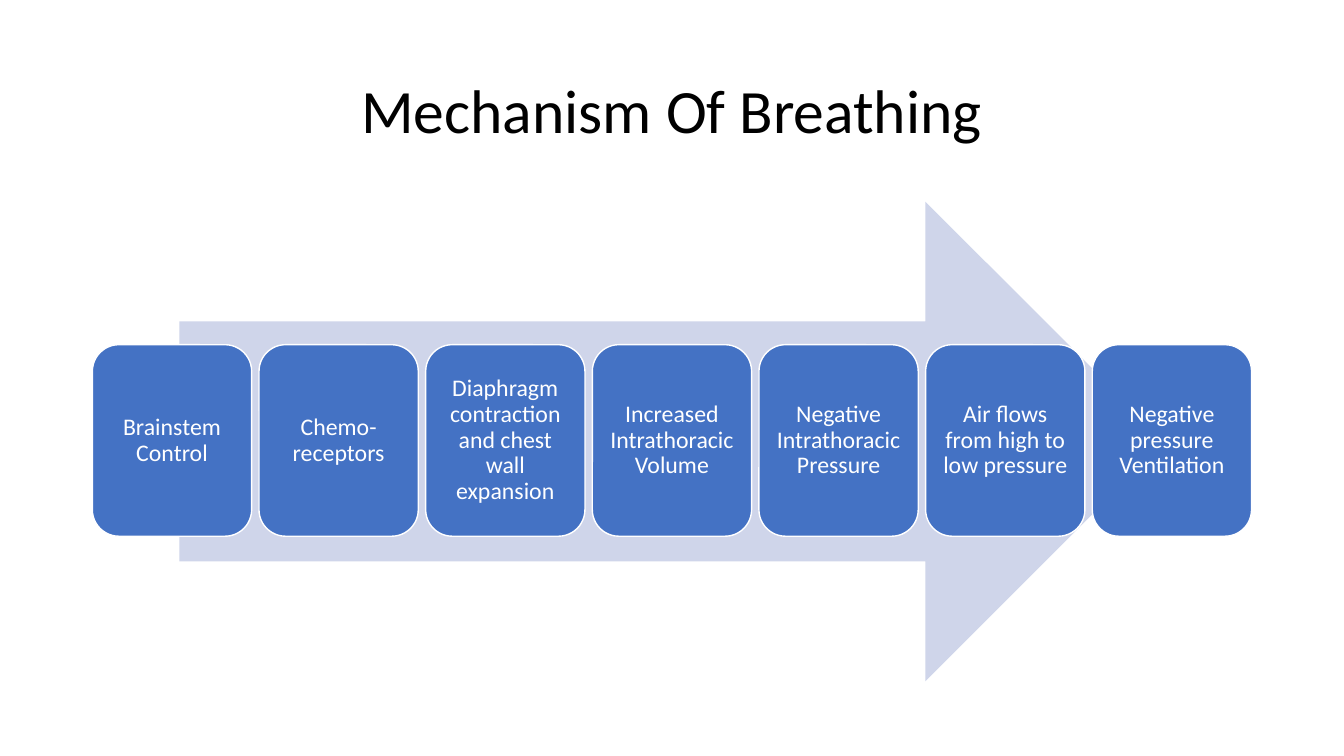
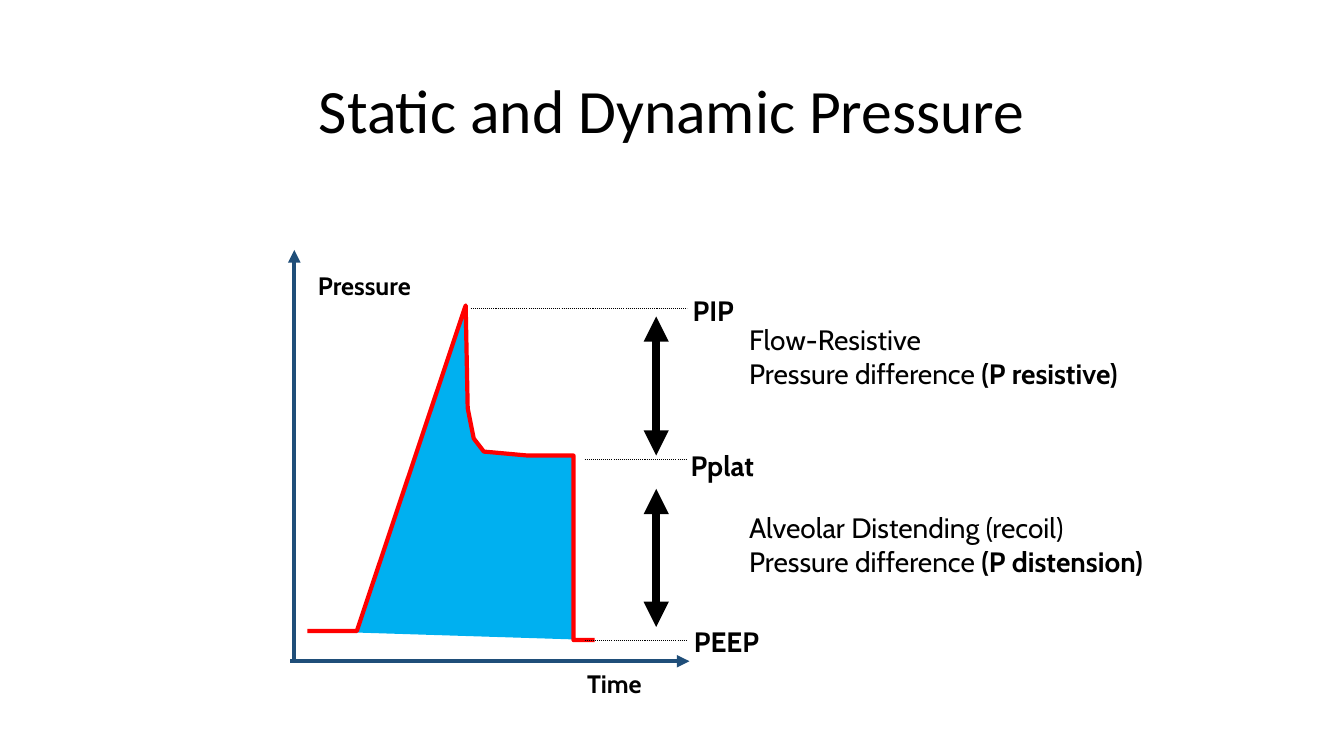
import pptx
import pptx.util
import pptx.dml.color
import pptx.enum.dml
import pptx.enum.shapes
import pptx.enum.text
import pptx.oxml.ns
import lxml.etree

HUES = {
    "ink": "000000", "white": "FFFFFF", "box": "4472C4", "band": "CFD5EA",
    "axis": "1F4E79", "area": "00B0F0", "curve": "FF0000",
}
FORMS = pptx.enum.shapes.MSO_SHAPE
ALIGN = pptx.enum.text.PP_ALIGN
MID = pptx.enum.text.MSO_ANCHOR.MIDDLE
TOP = pptx.enum.text.MSO_ANCHOR.TOP
DOTS = pptx.enum.dml.MSO_LINE.ROUND_DOT
COLS, ROWS = 80, 45
LEFT, SPAN = 5.5, 69


class Deck:
    """Hold the style and the current slide, on a grid of 80 columns by 45 rows."""

    def __init__(self):
        self.show = pptx.Presentation()
        self.show.slide_width = pptx.util.Inches(13.33)
        self.show.slide_height = pptx.util.Inches(7.5)
        self.page = None

    def grid(self, *spots):
        wide = self.show.slide_width / COLS
        high = self.show.slide_height / ROWS
        return [round(spot * (high if i % 2 else wide)) for i, spot in enumerate(spots)]

    def hue(self, name):
        return pptx.dml.color.RGBColor.from_string(HUES[name])

    def style(self, item, form):
        for key, value in form.items():
            setattr(item, key, value)

    def words(self, frame, paras, font, para, body, hue="ink"):
        self.style(frame, {"word_wrap": True, **body})
        for i, runs in enumerate(paras):
            line = frame.paragraphs[0] if i == 0 else frame.add_paragraph()
            self.style(line, para)
            for label, bold in runs:
                run = line.add_run()
                run.text = label
                self.style(run.font, {"bold": bold, **font})
                run.font.color.rgb = self.hue(hue)

    def start(self, label):
        self.page = self.show.slides.add_slide(self.show.slide_layouts[5])
        title = self.page.shapes.title
        place = zip(("left", "top", "width", "height"), self.grid(LEFT, 2.4, SPAN, 8.7))
        self.style(title, dict(place))
        self.words(
            title.text_frame, [[(label, False)]],
            {"name": "Calibri", "size": pptx.util.Pt(44)},
            {"alignment": ALIGN.CENTER, "line_spacing": 0.9},
            {"vertical_anchor": MID},
        )

    def paint(self, shape, fill, line=None, width=1):
        shape.shadow.inherit = False
        shape.fill.solid()
        shape.fill.fore_color.rgb = self.hue(fill)
        if line:
            shape.line.color.rgb = self.hue(line)
            shape.line.width = pptx.util.Pt(width)
        else:
            shape.line.fill.background()

    def shape(self, form, place, fill, line=None):
        shape = self.page.shapes.add_shape(form, *self.grid(*place))
        self.paint(shape, fill, line)
        return shape

    def card(self, place, label):
        card = self.shape(FORMS.ROUNDED_RECTANGLE, place, "box", "white")
        sides = ("margin_left", "margin_right", "margin_top", "margin_bottom")
        self.words(
            card.text_frame, [[(label, False)]],
            {"name": "Calibri", "size": pptx.util.Pt(17)},
            {"alignment": ALIGN.CENTER, "line_spacing": 0.9},
            {"vertical_anchor": MID, **dict.fromkeys(sides, pptx.util.Inches(0.07))},
            "white",
        )

    def text(self, place, paras, size=20, align=ALIGN.LEFT, anchor=TOP, wrap=False):
        box = self.page.shapes.add_textbox(*self.grid(*place))
        self.words(
            box.text_frame, paras,
            {"name": "Cabin", "size": pptx.util.Pt(size)},
            {"alignment": align},
            {"vertical_anchor": anchor, "word_wrap": wrap,
             "auto_size": pptx.enum.text.MSO_AUTO_SIZE.SHAPE_TO_FIT_TEXT},
        )

    def line(self, ends, hue, width, tips=(), dash=None):
        kind = pptx.enum.shapes.MSO_CONNECTOR.STRAIGHT
        line = self.page.shapes.add_connector(kind, *self.grid(*ends))
        line.line.color.rgb = self.hue(hue)
        self.style(line.line, {"width": pptx.util.Pt(width), "dash_style": dash})
        name = pptx.oxml.ns.qn
        props = line.element.spPr
        for tip in tips:
            lxml.etree.SubElement(props.find(name("a:ln")), name("a:" + tip), type="triangle")
        lxml.etree.SubElement(props, name("a:effectLst"))

    def curve(self, spots, fill, line, width):
        first, *rest = [self.grid(*spot) for spot in spots]
        maker = self.page.shapes.build_freeform(*first)
        maker.add_line_segments(rest, close=False)
        self.paint(maker.convert_to_shape(), fill, line, width)


def breath(deck):
    deck.start("Mechanism Of Breathing")
    deck.shape(FORMS.RIGHT_ARROW, (10.68, 12, 58.68, 28.56), "band")
    steps = [
        "Brainstem Control",
        "Chemo-receptors",
        "Diaphragm contraction and chest wall expansion",
        "Increased Intrathoracic Volume",
        "Negative Intrathoracic Pressure",
        "Air flows from high to low pressure",
        "Negative pressure Ventilation",
    ]
    gap = 0.44
    wide = (SPAN - gap * (len(steps) - 1)) / len(steps)
    for i, step in enumerate(steps):
        deck.card((LEFT + i * (wide + gap), 20.52, wide, 11.4), step)


def force(deck):
    deck.start("Static and Dynamic Pressure")
    base, stem, edge, mark = 39.36, 17.52, 40.92, 39.06
    for ends in ((17.28, base, 41.04, base), (stem, base, stem, 14.88)):
        deck.line(ends, "axis", 3, ["tailEnd"])
    wave = [
        (18.3, 37.56), (21.24, 37.56), (27.72, 18.18), (27.84, 24.3), (28.2, 26.1),
        (28.8, 26.88), (31.44, 27.12), (34.14, 27.12), (34.14, 38.1), (35.4, 38.1),
    ]
    deck.curve(wave, "area", "curve", 3)
    for label, left, top, wide in (("Time", 34.08, 39.48, 4.98), ("Pressure", 17.88, 15.78, 7.62)):
        deck.text((left, top, wide, 2.4), [[(label, True)]], 18, ALIGN.CENTER, MID)
    levels = [
        ("PIP", 28.02, 18.36, 40.32, 17.16, 3.96),
        ("Pplat", 34.8, 27.36, 40.14, 26.4, 5.34),
        ("PEEP", 34.8, 38.1, 40.2, 36.9, 5.58),
    ]
    for label, start, level, left, top, wide in levels:
        deck.line((start, level, edge, level), "ink", 0.75, dash=DOTS)
        deck.text((left, top, wide, 2.64), [[(label, True)]], align=ALIGN.RIGHT)
    notes = [
        (18.84, 27.12, 18.9, "Flow-Resistive", "(P resistive)"),
        (29.1, 37.32, 30.12, "Alveolar Distending (recoil)", "(P distension)"),
    ]
    for high, low, top, head, term in notes:
        deck.line((mark, high, mark, low), "ink", 6, ["headEnd", "tailEnd"])
        paras = [[(head, False)], [("Pressure difference ", False), (term, True)]]
        deck.text((44, top, 26.88, 4.62), paras, wrap=True)


def main():
    deck = Deck()
    breath(deck)
    force(deck)
    deck.show.save("out.pptx")


if __name__ == "__main__":
    main()
